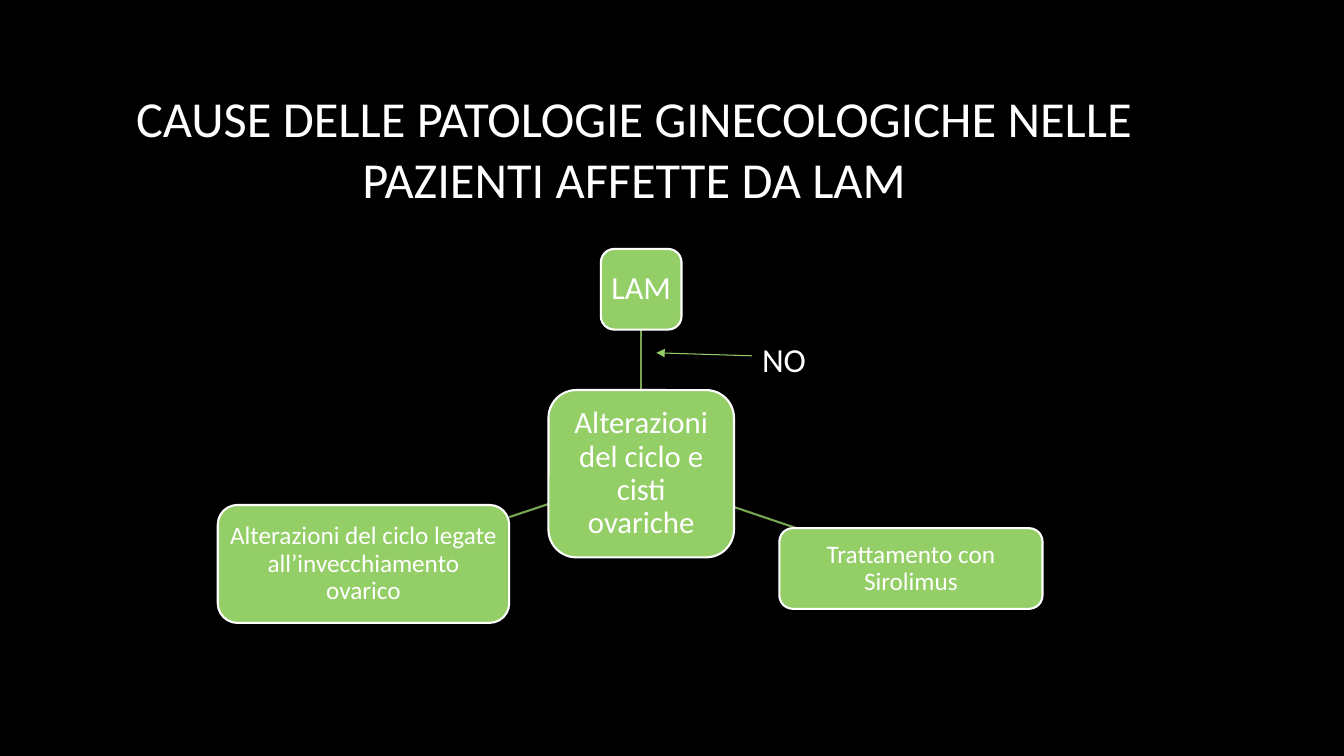
from lxml import etree
from pptx import Presentation
from pptx.dml.color import RGBColor
from pptx.enum.shapes import MSO_CONNECTOR, MSO_SHAPE
from pptx.enum.text import MSO_ANCHOR, PP_ALIGN
from pptx.oxml.ns import qn
from pptx.util import Inches, Pt

COLORS = {"background": "000000", "text": "FFFFFF", "box": "94CE67", "link": "77A552"}


def add_text(sp, text, size, align, anchor, inset_x, inset_y, spacing=1.0):
    tf = sp.text_frame
    tf.word_wrap = True
    tf.vertical_anchor = anchor
    tf.margin_left = tf.margin_right = Inches(inset_x)
    tf.margin_top = tf.margin_bottom = Inches(inset_y)
    p = tf.paragraphs[0]
    p.alignment = align
    p.line_spacing = spacing
    r = p.add_run()
    r.text = text
    r.font.size = Pt(size)
    r.font.name = "Calibri"
    r.font.color.rgb = RGBColor.from_string(COLORS["text"])


def add_line(x1, y1, x2, y2, color, width):
    line = s.shapes.add_connector(
        MSO_CONNECTOR.STRAIGHT, Inches(x1), Inches(y1), Inches(x2), Inches(y2))
    line.line.color.rgb = RGBColor.from_string(COLORS[color])
    line.line.width = Pt(width)
    etree.SubElement(line._element.spPr, qn("a:effectLst"))
    return line


prs = Presentation()
prs.slide_width = Inches(13.33)
prs.slide_height = Inches(7.5)
s = prs.slides.add_slide(prs.slide_layouts[6])
s.background.fill.solid()
s.background.fill.fore_color.rgb = RGBColor.from_string(COLORS["background"])

title = s.shapes.add_textbox(Inches(0.75), Inches(0.67), Inches(11.08), Inches(1.59))
add_text(title, "CAUSE DELLE PATOLOGIE GINECOLOGICHE NELLE PAZIENTI AFFETTE DA LAM",
         36, PP_ALIGN.CENTER, MSO_ANCHOR.MIDDLE, 0.1, 0.05)

links = [
    (6.36, 3.87, 6.36, 3.27),
    (7.28, 5.03, 7.9, 5.24),
    (5.44, 5.0, 5.05, 5.13),
]
for ends in links:
    add_line(*ends, "link", 1.5)

boxes = [
    ("Alterazioni del ciclo e cisti ovariche", 5.44, 3.87, 1.84, 1.66, 22, 0.06),
    ("LAM", 5.96, 2.47, 0.8, 0.8, 23, 0.06),
    ("Trattamento con Sirolimus", 7.73, 5.24, 2.61, 0.8, 18, 0.05),
    ("Alterazioni del ciclo legate all’invecchiamento ovarico", 2.16, 5.01, 2.89, 1.17, 18, 0.05),
]
for text, x, y, w, h, size, inset in boxes:
    sp = s.shapes.add_shape(
        MSO_SHAPE.ROUNDED_RECTANGLE, Inches(x), Inches(y), Inches(w), Inches(h))
    sp.shadow.inherit = False
    sp.fill.solid()
    sp.fill.fore_color.rgb = RGBColor.from_string(COLORS["box"])
    sp.line.color.rgb = RGBColor.from_string(COLORS["text"])
    sp.line.width = Pt(1.5)
    add_text(sp, text, size, PP_ALIGN.CENTER, MSO_ANCHOR.MIDDLE, inset, inset, 0.9)

arrow = add_line(7.46, 3.53, 6.51, 3.5, "box", 0.75)
etree.SubElement(arrow.line._get_or_add_ln(), qn("a:tailEnd"), type="triangle")

no_label = s.shapes.add_textbox(Inches(7.46), Inches(3.31), Inches(0.96), Inches(0.5))
add_text(no_label, "NO", 24, PP_ALIGN.LEFT, MSO_ANCHOR.TOP, 0.1, 0.05)

prs.save("out.pptx")
